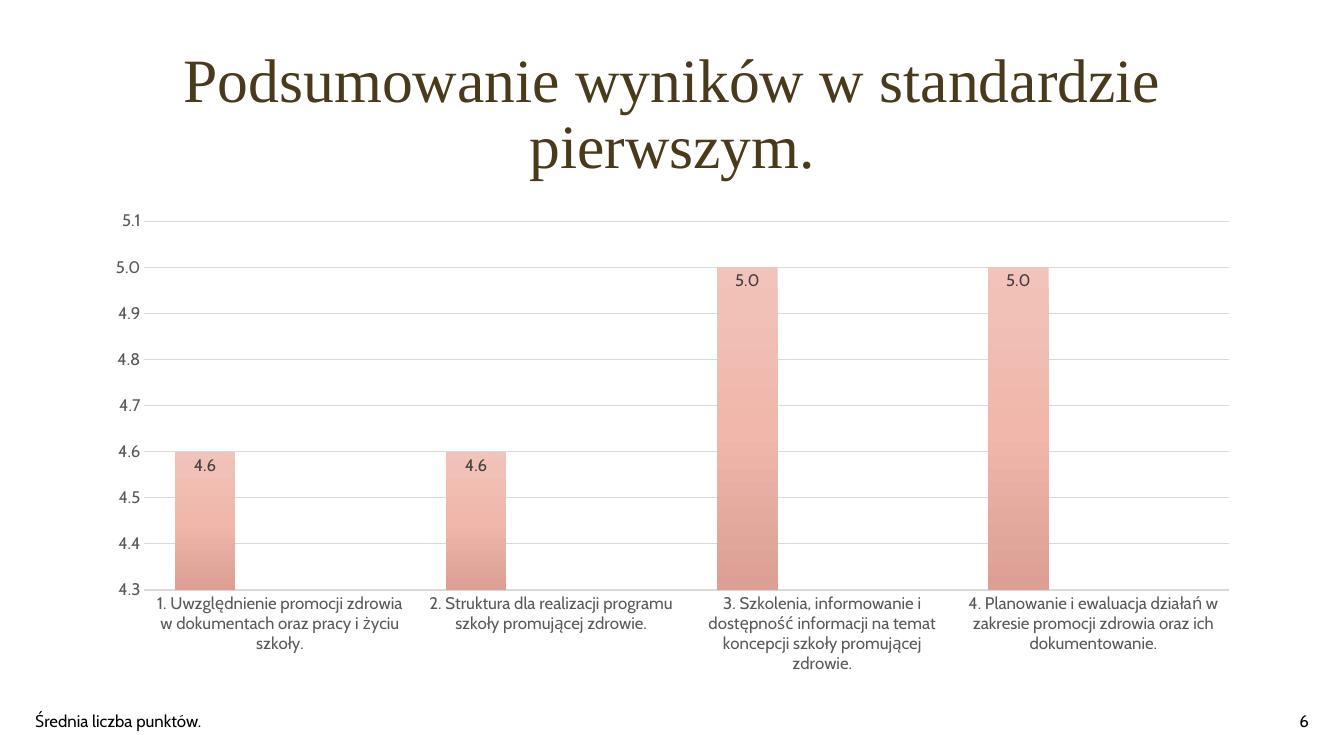
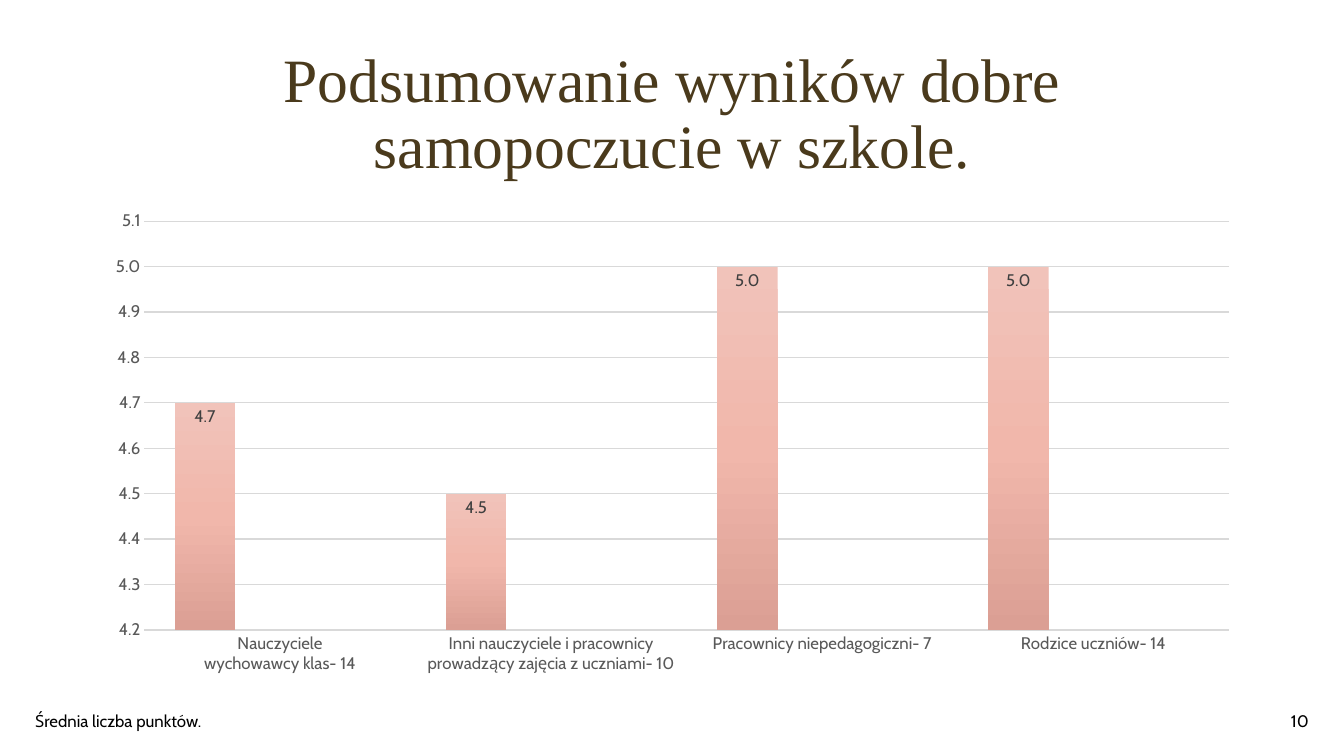
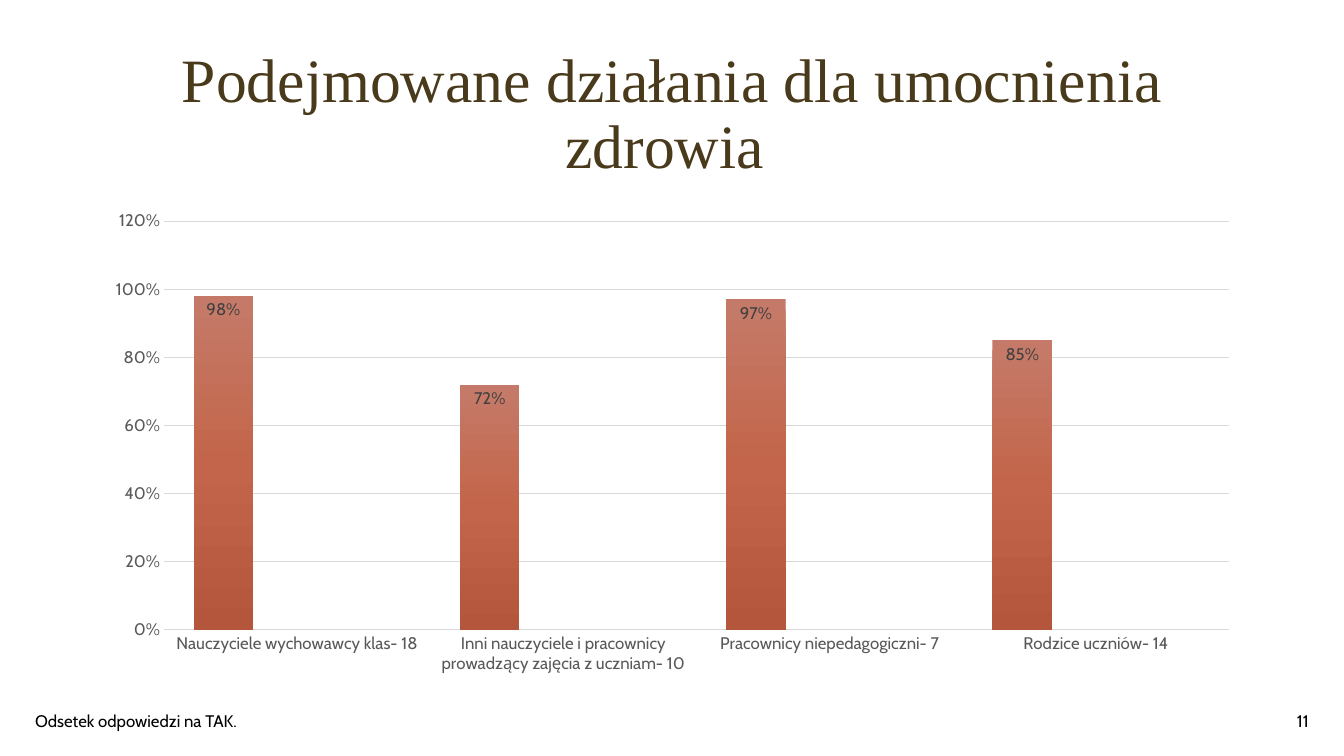
from lxml.etree import SubElement
from pptx import Presentation
from pptx.chart.data import CategoryChartData
from pptx.dml.color import RGBColor
from pptx.enum.chart import XL_CHART_TYPE as ChartType, XL_LABEL_POSITION as LabelPosition
from pptx.enum.chart import XL_TICK_MARK as TickMark
from pptx.enum.text import MSO_ANCHOR as Anchor, MSO_AUTO_SIZE as AutoSize, PP_ALIGN as Align
from pptx.oxml.ns import qn
from pptx.util import Inches, Pt

WIDTH, HEIGHT = 13.33, 7.5
MARGIN, EDGE = 0.92, 0.25
CONTENT_WIDTH = 11.5
TITLE_FONT, BODY_FONT = "Times New Roman", "Cabin"
TITLE_COLOR, AXIS_COLOR, GRID_COLOR, LABEL_COLOR = "4A3A1C", "595959", "D9D9D9", "404040"

LIGHT = ("F1C3BA", "F1B7AB", "DB9F94")
MEDIUM = ("E88D75", "EB7959", "D86748")
DARK = ("C57A69", "C3654A", "B3563C")

STAFF = "Inni nauczyciele i pracownicy prowadzący zajęcia z "
SCORES = {"format": "0.0", "gradients": (LIGHT, MEDIUM, DARK), "caption": "Średnia liczba punktów."}
SHARES = {"format": "0%", "gradients": (DARK, MEDIUM, LIGHT), "caption": "Odsetek odpowiedzi na TAK."}

SLIDES = [
    {
        "title": "Podsumowanie wyników w standardzie pierwszym.",
        "number": 6,
        "style": SCORES,
        "scale": (4.3, 5.1, 0.1),
        "data": [
            ("1. Uwzględnienie promocji zdrowia w dokumentach oraz pracy i życiu szkoły.", 4.6),
            ("2. Struktura dla realizacji programu szkoły promującej zdrowie.", 4.6),
            ("3. Szkolenia, informowanie i dostępność informacji na temat koncepcji szkoły "
             "promującej zdrowie.", 5),
            ("4. Planowanie i ewaluacja działań w zakresie promocji zdrowia oraz ich "
             "dokumentowanie.", 5),
        ],
    },
    {
        "title": "Podsumowanie wyników dobre samopoczucie w szkole.",
        "number": 10,
        "style": SCORES,
        "scale": (4.2, 5.1, 0.1),
        "data": [
            ("Nauczyciele\nwychowawcy klas- 14", 4.7),
            (STAFF + "uczniami- 10", 4.5),
            ("Pracownicy niepedagogiczni- 7", 5),
            ("Rodzice uczniów- 14", 5),
        ],
    },
    {
        "title": "Podejmowane działania dla umocnienia zdrowia ",
        "number": 11,
        "style": SHARES,
        "scale": (0, 1.2, 0.2),
        "data": [
            ("Nauczyciele wychowawcy klas- 18", 0.98),
            (STAFF + "uczniam- 10", 0.72),
            ("Pracownicy niepedagogiczni- 7", 0.97),
            ("Rodzice uczniów- 14", 0.85),
        ],
    },
]


def rgb(color):
    return RGBColor.from_string(color)


def set_font(font, size, color, name=BODY_FONT):
    font.size, font.name, font.bold = Pt(size), name, False
    font.color.rgb = rgb(color)


def place(shape, left, top, width, height):
    shape.left, shape.top = Inches(left), Inches(top)
    shape.width, shape.height = Inches(width), Inches(height)


def write(shape, text, size=12, color="000000", name=BODY_FONT, align=Align.LEFT, spacing=None):
    frame = shape.text_frame
    frame.word_wrap = True
    frame.auto_size = AutoSize.NONE
    frame.vertical_anchor = Anchor.MIDDLE
    para = frame.paragraphs[0]
    para.alignment, para.line_spacing = align, spacing
    span = para.add_run()
    span.text = text
    set_font(span.font, size, color, name)


def add_title(page, text):
    title = page.shapes.title
    place(title, MARGIN, 0.42, CONTENT_WIDTH, 1.45)
    title.fill.solid()
    title.fill.fore_color.rgb = rgb("FFFFFF")
    white = next(title.fill._xPr.iter(qn("a:srgbClr")))
    SubElement(white, qn("a:alpha"), val="47000")
    write(title, text, size=44, color=TITLE_COLOR, name=TITLE_FONT, align=Align.CENTER, spacing=0.9)


def add_footer(page, text, left, width, align):
    box = page.shapes.add_textbox(0, 0, 0, 0)
    place(box, left, 6.95, width, 0.4)
    write(box, text, align=align)


def fill_gradient(series, colors):
    fill = series.format.fill
    fill.gradient()
    fill.gradient_angle = 270
    stops = next(series._element.iter(qn("a:gsLst")))
    stops.clear()
    for index, color in enumerate(colors):
        stop = SubElement(stops, qn("a:gs"), pos=str(index * 50000))
        SubElement(stop, qn("a:srgbClr"), val=color)


def add_column_chart(page, rows, scale, style):
    categories, values = zip(*rows)
    data = CategoryChartData(number_format=style["format"])
    data.categories = categories
    blank = [None] * len(values)
    for index, series_values in enumerate((values, blank, blank), 1):
        data.add_series(f"Series {index}", series_values)
    chart = page.shapes.add_chart(
        ChartType.COLUMN_CLUSTERED, Inches(MARGIN), Inches(2),
        Inches(CONTENT_WIDTH), Inches(4.78), data).chart
    chart.has_legend = chart.has_title = False
    set_font(chart.font, 10, "000000")

    for axis in (chart.category_axis, chart.value_axis):
        axis.major_tick_mark = axis.minor_tick_mark = TickMark.NONE
        set_font(axis.tick_labels.font, 12, AXIS_COLOR)
    category_line = chart.category_axis.format.line
    category_line.color.rgb, category_line.width = rgb(GRID_COLOR), Pt(1)

    axis = chart.value_axis
    axis.minimum_scale, axis.maximum_scale, axis.major_unit = scale
    axis.format.line.fill.background()
    grid_line = axis.major_gridlines.format.line
    grid_line.color.rgb, grid_line.width = rgb(GRID_COLOR), Pt(0.75)
    axis.tick_labels.number_format = style["format"]
    axis.tick_labels.number_format_is_linked = False

    plot = chart.plots[0]
    plot.gap_width, plot.overlap, plot.vary_by_categories = 100, -24, False
    for series, colors in zip(plot.series, style["gradients"]):
        fill_gradient(series, colors)
        labels = series.data_labels
        labels.show_value = True
        labels.position = LabelPosition.INSIDE_END
        labels.number_format = style["format"]
        labels.number_format_is_linked = False
        set_font(labels.font, 12, LABEL_COLOR)


def main():
    deck = Presentation()
    deck.slide_width, deck.slide_height = Inches(WIDTH), Inches(HEIGHT)
    for content in SLIDES:
        page = deck.slides.add_slide(deck.slide_layouts[5])
        style = content["style"]
        add_title(page, content["title"])
        add_column_chart(page, content["data"], content["scale"], style)
        add_footer(page, style["caption"], EDGE, 4.5, Align.LEFT)
        add_footer(page, str(content["number"]), WIDTH - EDGE - 3, 3, Align.RIGHT)
    deck.save("out.pptx")


if __name__ == "__main__":
    main()
